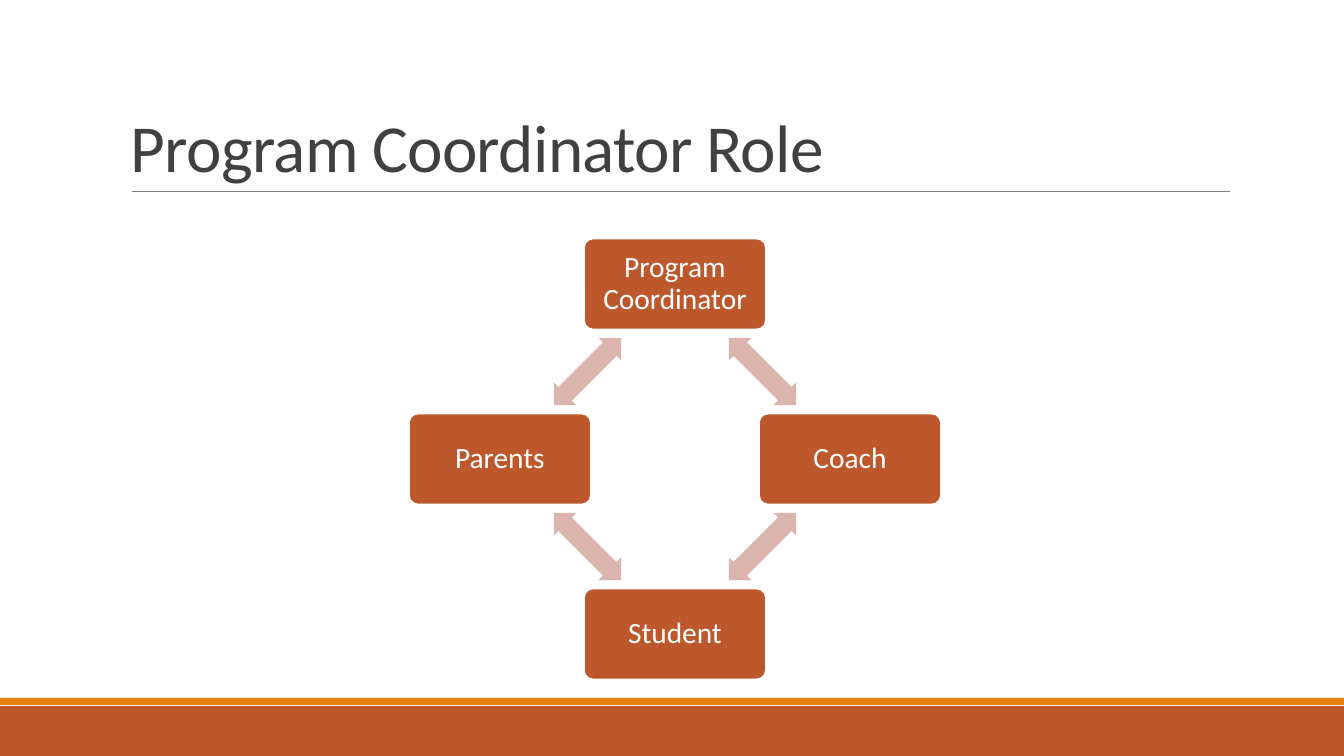
from math import cos, radians, sin

from lxml.etree import SubElement
from pptx import Presentation
from pptx.dml.color import RGBColor
from pptx.enum.shapes import MSO_CONNECTOR, MSO_SHAPE
from pptx.enum.text import MSO_ANCHOR, PP_ALIGN
from pptx.oxml.ns import qn
from pptx.util import Pt

TITLE = "Program Coordinator Role"
ROLES = ["Program Coordinator", "Coach", "Student", "Parents"]  # clockwise from the top

FONT = "Calibri"
WHITE, RUST, ORANGE = "FFFFFF", "BD582C", "E48312"
PINK, RULE_GRAY, TITLE_GRAY = "DBB5AD", "808080", "404040"

# All lengths in px
SLIDE_W, SLIDE_H = 1344, 756
FOOTER_H, STRIPE_H = 50, 7
TITLE_BOX = (121, 31, 1109, 160)
RULE_LEFT, RULE_RIGHT, RULE_Y = 132, 1230, 191
CENTER_X, CENTER_Y, RADIUS = 675, 459, 175
ROLE_W, ROLE_H = 182, 91
ARROW_W, ARROW_H = 95, 32
ROLE_INSET = 12


def px(length):
    return round(length * 914400 / 100.8)


def rgb(color):
    return RGBColor.from_string(color)


def add_block(kind, box, fill, outline=None):
    block = slide.shapes.add_shape(kind, *map(px, box))
    block.shadow.inherit = False
    block.fill.solid()
    block.fill.fore_color.rgb = rgb(fill)
    if outline:
        block.line.color.rgb = rgb(outline)
        block.line.width = Pt(1.25)
    else:
        block.line.fill.background()
    return block


def write(frame, text, size, color, anchor, align, spacing):
    frame.word_wrap = True
    frame.vertical_anchor = anchor
    paragraph = frame.paragraphs[0]
    paragraph.alignment = align
    paragraph.line_spacing = spacing
    run = paragraph.add_run()
    run.text = text
    run.font.name = FONT
    run.font.size = Pt(size)
    run.font.color.rgb = rgb(color)
    return run


def on_ring(angle, radius, width, height):
    """Box centred on the ring, with the angle clockwise from the top."""
    x = CENTER_X + radius * sin(radians(angle))
    y = CENTER_Y - radius * cos(radians(angle))
    return x - width / 2, y - height / 2, width, height


prs = Presentation()
prs.slide_width, prs.slide_height = px(SLIDE_W), px(SLIDE_H)
slide = prs.slides.add_slide(prs.slide_layouts[6])

footer_top = SLIDE_H - FOOTER_H
add_block(MSO_SHAPE.RECTANGLE, (0, footer_top, SLIDE_W, FOOTER_H), RUST)
add_block(MSO_SHAPE.RECTANGLE, (0, footer_top - STRIPE_H - 1, SLIDE_W, STRIPE_H), ORANGE)

rule = slide.shapes.add_connector(
    MSO_CONNECTOR.STRAIGHT, *map(px, (RULE_LEFT, RULE_Y, RULE_RIGHT, RULE_Y)))
rule.line.color.rgb = rgb(RULE_GRAY)
rule.line.width = Pt(0.5)
SubElement(rule._element.spPr, qn("a:effectLst"))

title = slide.shapes.add_textbox(*map(px, TITLE_BOX))
title_run = write(title.text_frame, TITLE, 48, TITLE_GRAY,
                  MSO_ANCHOR.BOTTOM, PP_ALIGN.LEFT, 0.85)
title_run._r.get_or_add_rPr().set("spc", "-50")

step = 360 / len(ROLES)
arrow_radius = RADIUS * cos(radians(step / 2))  # midpoint between neighbouring roles
for index, role in enumerate(ROLES):
    angle = index * step
    role_box = add_block(MSO_SHAPE.ROUNDED_RECTANGLE,
                         on_ring(angle, RADIUS, ROLE_W, ROLE_H), RUST, WHITE)
    role_box.adjustments[0] = 0.1
    frame = role_box.text_frame
    frame.margin_left = frame.margin_right = px(ROLE_INSET)
    frame.margin_top = frame.margin_bottom = px(ROLE_INSET)
    write(frame, role, 21, WHITE, MSO_ANCHOR.MIDDLE, PP_ALIGN.CENTER, 0.9)

    arrow_angle = angle + step / 2
    arrow = add_block(MSO_SHAPE.LEFT_RIGHT_ARROW,
                      on_ring(arrow_angle, arrow_radius, ARROW_W, ARROW_H), PINK)
    arrow.adjustments[0], arrow.adjustments[1] = 0.6, 0.5
    arrow.rotation = arrow_angle

prs.save("out.pptx")
